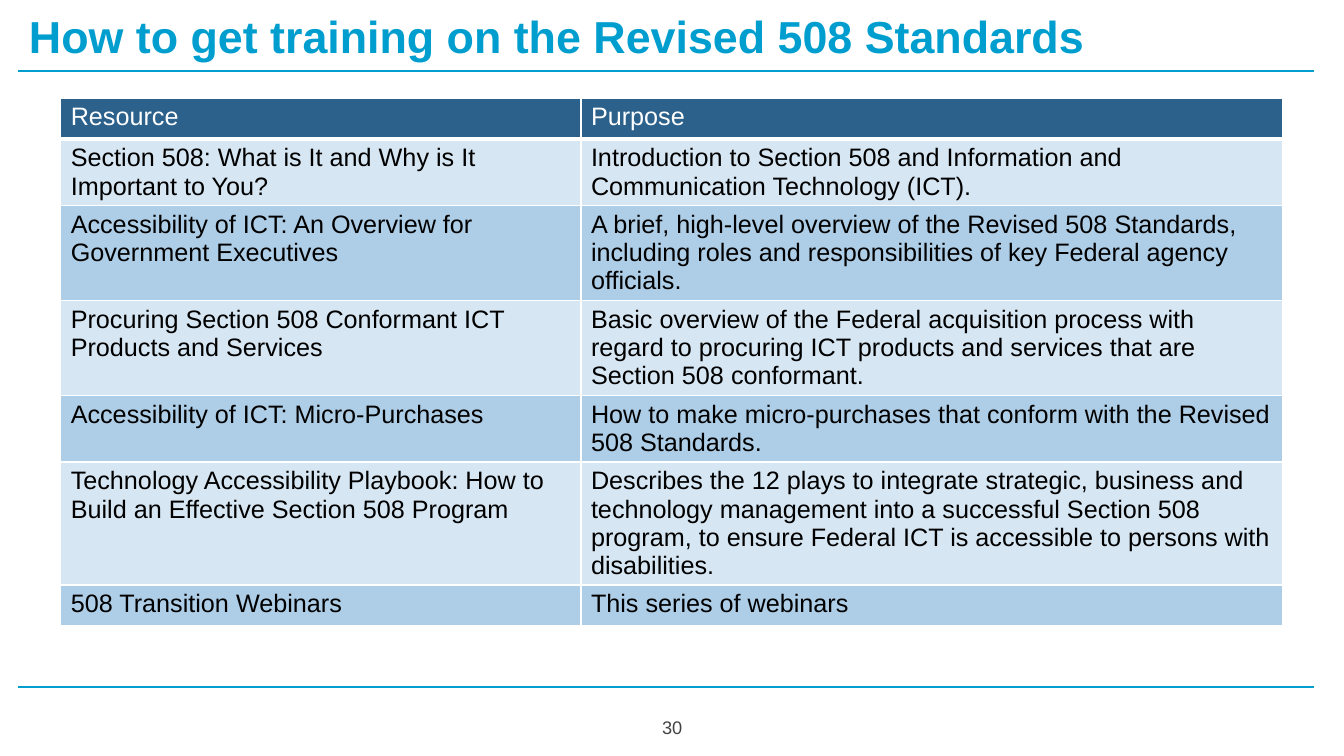
from dataclasses import dataclass

from lxml.etree import SubElement
from pptx import Presentation
from pptx.dml.color import RGBColor
from pptx.enum.shapes import MSO_CONNECTOR
from pptx.enum.text import MSO_ANCHOR, MSO_AUTO_SIZE, PP_ALIGN
from pptx.oxml.ns import qn
from pptx.slide import Slide
from pptx.table import _Cell
from pptx.text.text import TextFrame
from pptx.util import Cm, Pt

FONT = "Arial"
ACCENT = "009ECF"
HEADER_FILL = "2B618B"
BAND_FILLS = ("D6E6F2", "AECDE6")
INSET = Cm(0.25)


@dataclass(frozen=True)
class Training:
    resource: str
    purpose: str
    height: float


HEADER = Training("Resource", "Purpose", 1.03)
TRAININGS = [
    Training(
        "Section 508: What is It and Why is It Important to You?",
        "Introduction to Section 508 and Information and Communication Technology (ICT).",
        1.68,
    ),
    Training(
        "Accessibility of ICT: An Overview for Government Executives",
        "A brief, high-level overview of the Revised 508 Standards, including roles "
        "and responsibilities of key Federal agency officials.",
        2.39,
    ),
    Training(
        "Procuring Section 508 Conformant ICT Products and Services",
        "Basic overview of the Federal acquisition process with regard to procuring "
        "ICT products and services that are Section 508 conformant.",
        2.39,
    ),
    Training(
        "Accessibility of ICT: Micro-Purchases",
        "How to make micro-purchases that conform with the Revised 508 Standards.",
        1.68,
    ),
    Training(
        "Technology Accessibility Playbook: How to Build an Effective Section 508 Program",
        "Describes the 12 plays to integrate strategic, business and technology "
        "management into a successful Section 508 program, to ensure Federal ICT is "
        "accessible to persons with disabilities.",
        3.1,
    ),
    Training("508 Transition Webinars", "This series of webinars", 1.03),
]


def rgb(value: str) -> RGBColor:
    return RGBColor.from_string(value)


def write(tf: TextFrame, text: str, size: float, color: str,
          align: PP_ALIGN = PP_ALIGN.LEFT, bold: bool = False) -> None:
    tf.text = text
    p = tf.paragraphs[0]
    p.alignment = align
    p.font.name = FONT
    p.font.size = Pt(size)
    p.font.bold = bold
    p.font.color.rgb = rgb(color)


def frame_text(tf: TextFrame) -> None:
    tf.word_wrap = True
    tf.auto_size = MSO_AUTO_SIZE.NONE
    tf.vertical_anchor = MSO_ANCHOR.MIDDLE
    tf.margin_left = tf.margin_right = tf.margin_top = tf.margin_bottom = INSET


def add_rule(s: Slide, y: float) -> None:
    line = s.shapes.add_connector(MSO_CONNECTOR.STRAIGHT, Cm(0.46), Cm(y), Cm(33.12), Cm(y))
    line.line.color.rgb = rgb(ACCENT)
    line.line.width = Pt(1.5)
    SubElement(line._element.spPr, qn("a:effectLst"))


def add_title(s: Slide, text: str) -> None:
    sp = s.shapes.title
    sp.left, sp.top, sp.width, sp.height = Cm(0.48), Cm(0), Cm(27.76), Cm(1.78)
    frame_text(sp.text_frame)
    write(sp.text_frame, text, 32, ACCENT, bold=True)


def add_page_number(s: Slide, number: str) -> None:
    sp = s.shapes.add_textbox(Cm(16.18), Cm(17.6), Cm(1.52), Cm(1.45))
    frame_text(sp.text_frame)
    write(sp.text_frame, number, 13, "434343", PP_ALIGN.CENTER)


def set_borders(cell: _Cell, bottom: float) -> None:
    tc_pr = cell._tc.get_or_add_tcPr()
    for side, width in (("L", 1), ("R", 1), ("T", 1), ("B", bottom)):
        ln = SubElement(tc_pr, qn(f"a:ln{side}"), w=str(Pt(width)))
        fill = SubElement(ln, qn("a:solidFill"))
        SubElement(fill, qn("a:srgbClr"), val="FFFFFF")


def add_training_table(s: Slide) -> None:
    rows = [HEADER, *TRAININGS]
    widths = (13.11, 17.69)
    height = sum(row.height for row in rows)
    table = s.shapes.add_table(
        len(rows), len(widths), Cm(1.53), Cm(2.47), Cm(sum(widths)), Cm(height)
    ).table
    for column, width in zip(table.columns, widths):
        column.width = Cm(width)
    for i, row in enumerate(rows):
        table.rows[i].height = Cm(row.height)
        is_header = i == 0
        fill = HEADER_FILL if is_header else BAND_FILLS[(i - 1) % 2]
        for j, text in enumerate((row.resource, row.purpose)):
            cell = table.cell(i, j)
            set_borders(cell, 3 if is_header else 1)
            cell.fill.solid()
            cell.fill.fore_color.rgb = rgb(fill)
            write(cell.text_frame, text, 18, "FFFFFF" if is_header else "000000")


def main() -> None:
    prs = Presentation()
    prs.slide_width, prs.slide_height = Cm(33.87), Cm(19.05)
    s = prs.slides.add_slide(prs.slide_layouts[5])
    for y in (1.78, 17.32):
        add_rule(s, y)
    add_title(s, "How to get training on the Revised 508 Standards")
    add_page_number(s, "30")
    add_training_table(s)
    prs.save("out.pptx")


if __name__ == "__main__":
    main()
